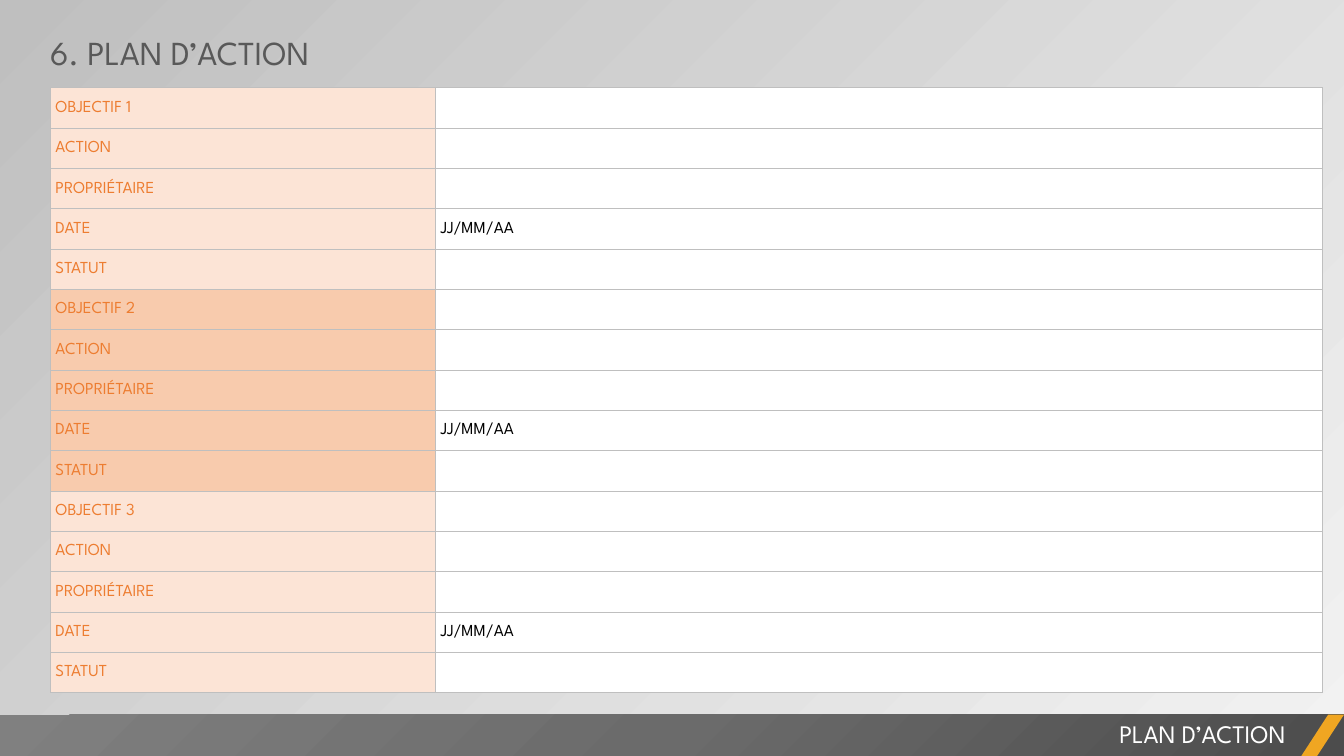
from dataclasses import dataclass
from pptx import Presentation
from pptx import util as u
from pptx.dml.color import RGBColor
from pptx.enum import shapes, text
from pptx.oxml import parse_xml
from pptx.oxml.ns import nsdecls


@dataclass
class Theme:
    font: str = "League Spartan"
    title: int = 24
    foot: int = 18
    cell: int = 12
    grey: str = "595959"
    white: str = "FFFFFF"
    black: str = "000000"
    amber: str = "F0A622"
    orange: str = "ED7D31"
    pale: str = "FCE4D6"
    peach: str = "F8CBAD"
    rule: str = "BFBFBF"
    back: tuple = ("F2F2F2", "BFBFBF")
    bar: tuple = ((0, "4C4C4C"), (50, "6B6B6B"), (100, "808080"))


theme = Theme()
rgb = RGBColor.from_string


def write(frame, words, size, color, align=text.PP_ALIGN.LEFT):
    """Put one formatted line into a text frame."""
    line = frame.paragraphs[0]
    line.alignment = align
    run = line.add_run()
    run.text = words
    run.font.name = theme.font
    run.font.size = u.Pt(size)
    run.font.color.rgb = rgb(color)


deck = Presentation()
deck.slide_width, deck.slide_height = u.Inches(13.33), u.Inches(7.5)
slide = deck.slides.add_slide(deck.slide_layouts[6])

# Background, light at the bottom right
fill = slide.background.fill
fill.gradient()
fill.gradient_angle = 135
for stop, place, color in zip(fill.gradient_stops, (0, 1), theme.back):
    stop.position = place
    stop.color.rgb = rgb(color)

# Footer bar and its slanted accent
bar = slide.shapes.add_shape(shapes.MSO_SHAPE.RECTANGLE, u.Inches(0), u.Inches(7.09),
                             u.Inches(13.33), u.Inches(0.42))
slant = slide.shapes.add_shape(shapes.MSO_SHAPE.PARALLELOGRAM, u.Inches(12.9), u.Inches(7.09),
                               u.Inches(0.43), u.Inches(0.42))
slant.adjustments[0] = 0.65
for shape in (bar, slant):
    shape.shadow.inherit = False
    shape.line.fill.background()
    shape.fill.solid()
    shape.fill.fore_color.rgb = rgb(theme.amber)

stops = "".join(f'<a:gs pos="{pos * 1000}"><a:srgbClr val="{color}"/></a:gs>'
                for pos, color in theme.bar)
solid = bar.fill._xPr.solidFill
solid.getparent().replace(solid, parse_xml(
    f'<a:gradFill {nsdecls("a")} rotWithShape="1"><a:gsLst>{stops}</a:gsLst>'
    '<a:path path="circle"><a:fillToRect l="100000" t="100000"/></a:path></a:gradFill>'))

# Footer label and title
label = slide.shapes.add_textbox(u.Inches(5.25), u.Inches(7.08), u.Inches(7.6), u.Inches(0.4))
label.text_frame.word_wrap = True
write(label.text_frame, "PLAN D’ACTION", theme.foot, theme.white, align=text.PP_ALIGN.RIGHT)

title = slide.shapes.add_textbox(u.Inches(0.4), u.Inches(0.27), u.Inches(2.8), u.Inches(0.5))
title.text_frame.word_wrap = False
write(title.text_frame, "6. PLAN D’ACTION", theme.title, theme.grey)

# Action table: one block of five rows for each goal
fields = ["ACTION", "PROPRIÉTAIRE", "DATE", "STATUT"]
rows = []
for goal, tint in enumerate((theme.pale, theme.peach, theme.pale), 1):
    for name in [f"OBJECTIF {goal}"] + fields:
        rows.append((name, "JJ/MM/AA" if name == "DATE" else "", tint))

table = slide.shapes.add_table(len(rows), 2, u.Inches(0.5), u.Inches(0.87),
                               u.Inches(12.62), u.Inches(6)).table
table.first_row = table.horz_banding = False
table.columns[0].width, table.columns[1].width = u.Inches(3.82), u.Inches(8.8)

for index, (name, value, tint) in enumerate(rows):
    table.rows[index].height = u.Inches(0.4)
    for col, (words, ink, shade) in enumerate(((name, theme.orange, tint),
                                               (value, theme.black, theme.white))):
        cell = table.cell(index, col)
        cell.vertical_anchor = text.MSO_ANCHOR.MIDDLE
        cell.margin_left, cell.margin_top = u.Inches(0.05), u.Inches(0.01)
        cell.margin_right, cell.margin_bottom = u.Inches(0.01), u.Inches(0)
        if words:
            write(cell.text_frame, words, theme.cell, ink)
        for side in "LRTB":
            cell._tc.get_or_add_tcPr().append(parse_xml(
                f'<a:ln{side} {nsdecls("a")} w="{u.Pt(0.5)}"><a:solidFill>'
                f'<a:srgbClr val="{theme.rule}"/></a:solidFill></a:ln{side}>'))
        cell.fill.solid()
        cell.fill.fore_color.rgb = rgb(shade)

deck.save("out.pptx")
